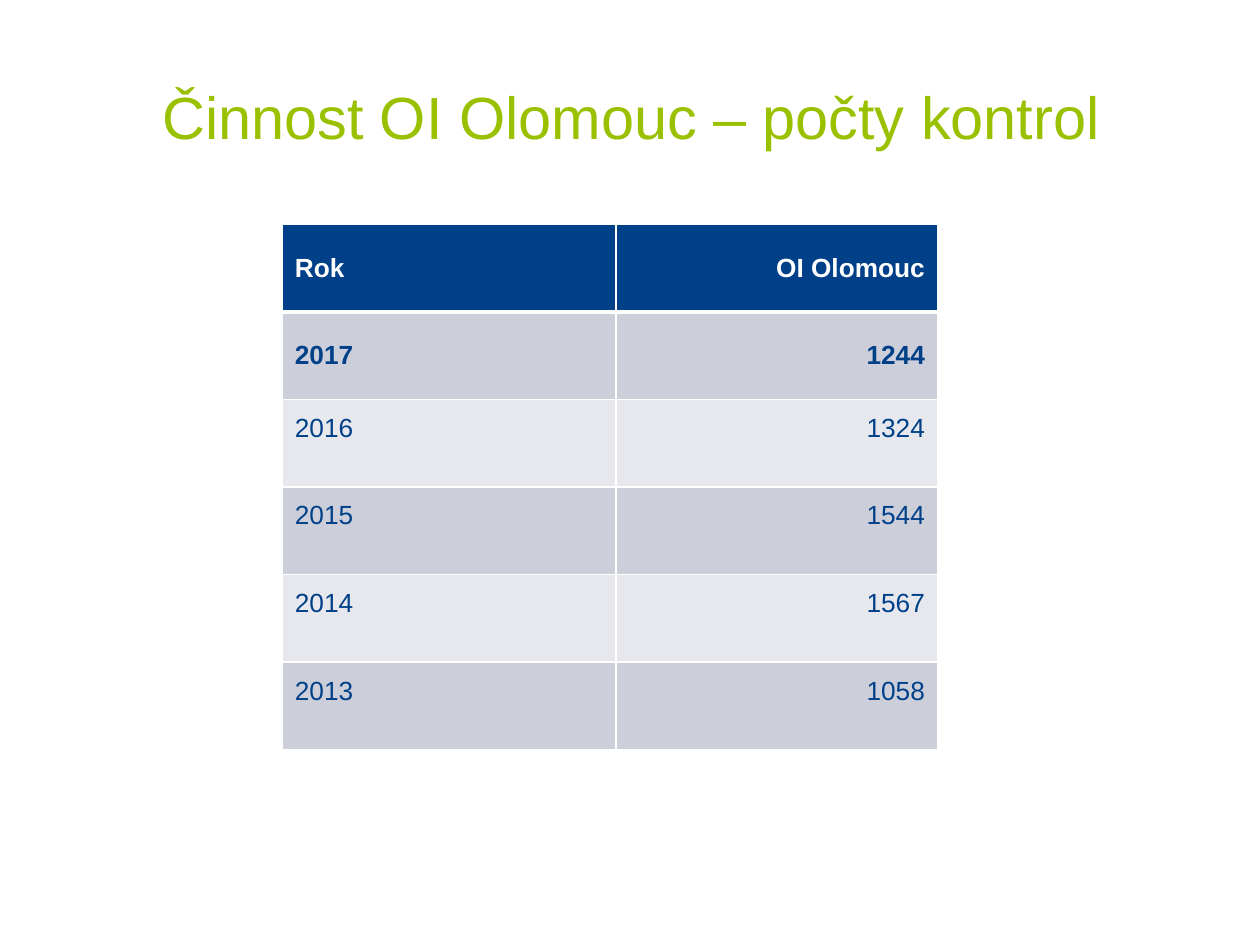
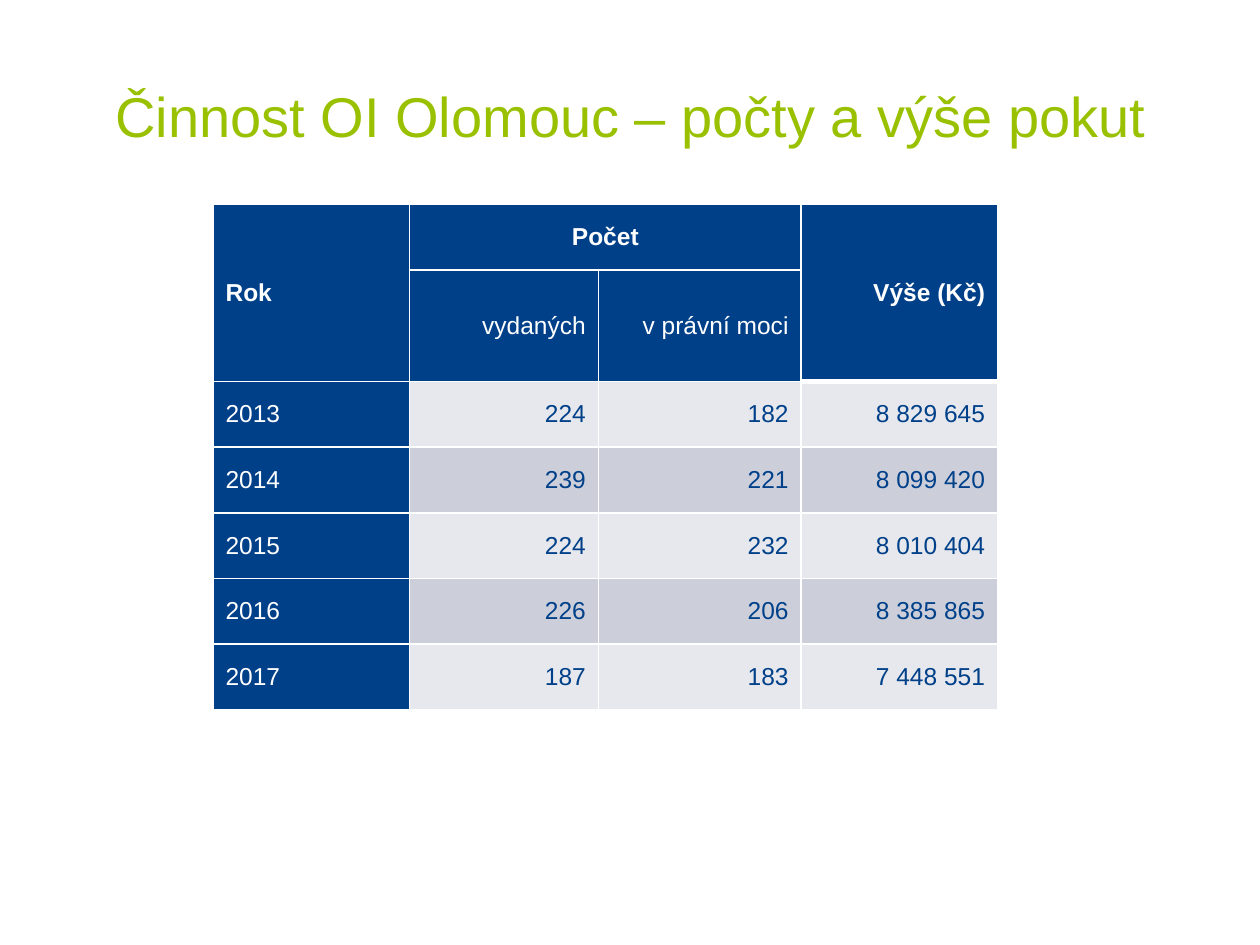
from lxml import etree
from pptx import Presentation
from pptx.dml.color import RGBColor
from pptx.enum.text import MSO_ANCHOR, MSO_AUTO_SIZE, PP_ALIGN
from pptx.oxml.ns import qn
from pptx.util import Pt

LEFT, CENTER, RIGHT = PP_ALIGN.LEFT, PP_ALIGN.CENTER, PP_ALIGN.RIGHT
MIDDLE = MSO_ANCHOR.MIDDLE
NO_AUTOFIT = MSO_AUTO_SIZE.NONE

FONT = "Arial"
COLORS = {
    "title": "99C100",
    "navy": "004089",
    "white": "FFFFFF",
    "dark_band": "CCCFDA",
    "light_band": "E7E8ED",
}
TITLE_ONLY_LAYOUT = 5


def write_text(text_frame, text, size, color, bold=False, align=LEFT):
    paragraph = text_frame.paragraphs[0]
    paragraph.alignment = align
    run = paragraph.add_run()
    run.text = text
    run.font.name = FONT
    run.font.size = Pt(size)
    run.font.bold = bold
    run.font.color.rgb = RGBColor.from_string(COLORS[color])


def format_cell(cell, fill, top=1, bottom=1):
    properties = cell._tc.get_or_add_tcPr()
    for side, width in (("L", 1), ("R", 1), ("T", top), ("B", bottom)):
        line = etree.SubElement(properties, qn(f"a:ln{side}"), w=str(Pt(width)))
        solid_fill = etree.SubElement(line, qn("a:solidFill"))
        etree.SubElement(solid_fill, qn("a:srgbClr"), val=COLORS["white"])
    cell.fill.solid()
    cell.fill.fore_color.rgb = RGBColor.from_string(COLORS[fill])
    cell.vertical_anchor = MIDDLE


slides = [
    {
        "title": "Činnost OI Olomouc – počty kontrol",
        "title_size": 34,
        "text_size": 15,
        "position": (161.3, 128.2),
        "column_widths": [190.8, 183.6],
        "row_heights": [50.05] * 6,
        "header_rows": 1,
        "header_column": False,
        "thick_columns": [0, 1],
        "bands": ["dark_band", "light_band"],
        "merges": [],
        "bold_texts": ["Rok", "OI Olomouc", "2017", "1244"],
        "raised_from_row": 2,
        "rows": [
            ["Rok", "OI Olomouc"],
            ["2017", "1244"],
            ["2016", "1324"],
            ["2015", "1544"],
            ["2014", "1567"],
            ["2013", "1058"],
        ],
    },
    {
        "title": "Činnost OI Olomouc – počty a výše pokut",
        "title_size": 32,
        "text_size": 14,
        "position": (121.7, 116.7),
        "column_widths": [112.3, 108, 115.9, 112.3],
        "row_heights": [37.5, 63.9] + [37.5] * 5,
        "header_rows": 2,
        "header_column": True,
        "thick_columns": [3],
        "bands": ["light_band", "dark_band"],
        "merges": [(0, 0, 1, 0), (0, 1, 0, 2), (0, 3, 1, 3)],
        "bold_texts": ["Rok", "Počet", "Výše (Kč)"],
        "raised_from_row": None,
        "rows": [
            ["Rok", "Počet", "", "Výše (Kč)"],
            ["", "vydaných", "v právní moci", ""],
            ["2013", "224", "182", "8 829 645"],
            ["2014", "239", "221", "8 099 420"],
            ["2015", "224", "232", "8 010 404"],
            ["2016", "226", "206", "8 385 865"],
            ["2017", "187", "183", "7 448 551"],
        ],
    },
]

presentation = Presentation()
presentation.slide_width = Pt(720)
presentation.slide_height = Pt(540)

for content in slides:
    slide = presentation.slides.add_slide(
        presentation.slide_layouts[TITLE_ONLY_LAYOUT]
    )
    title = slide.shapes.title
    title.left, title.top = Pt(36.7), Pt(20.9)
    title.width, title.height = Pt(648), Pt(90)
    title.text_frame.auto_size = NO_AUTOFIT
    title.text_frame.vertical_anchor = MIDDLE
    write_text(title.text_frame, content["title"], content["title_size"],
               "title", align=CENTER)

    rows = content["rows"]
    widths, heights = content["column_widths"], content["row_heights"]
    left, top = content["position"]
    table = slide.shapes.add_table(
        len(rows), len(widths), Pt(left), Pt(top), Pt(sum(widths)), Pt(sum(heights))
    ).table
    table.first_row = False
    table.horz_banding = False
    for column, width in zip(table.columns, widths):
        column.width = Pt(width)
    for row, height in zip(table.rows, heights):
        row.height = Pt(height)
    for first_row, first_column, last_row, last_column in content["merges"]:
        table.cell(first_row, first_column).merge(table.cell(last_row, last_column))

    header_rows = content["header_rows"]
    raised_from_row = content["raised_from_row"]
    for row_index, texts in enumerate(rows):
        for column_index, text in enumerate(texts):
            cell = table.cell(row_index, column_index)
            is_header = row_index < header_rows or (
                content["header_column"] and column_index == 0
            )
            band = content["bands"][(row_index - header_rows) % 2]
            is_thick = column_index in content["thick_columns"]
            format_cell(
                cell,
                "navy" if is_header else band,
                top=3 if is_thick and row_index == header_rows else 1,
                bottom=3 if is_thick and row_index < header_rows else 1,
            )
            if raised_from_row and row_index >= raised_from_row:
                cell.margin_bottom = Pt(20.8)
            if text:
                align = LEFT if column_index == 0 else RIGHT
                if cell.is_merge_origin and cell.span_width > 1:
                    align = CENTER
                write_text(
                    cell.text_frame,
                    text,
                    content["text_size"],
                    "white" if is_header else "navy",
                    bold=text in content["bold_texts"],
                    align=align,
                )

presentation.save("out.pptx")
